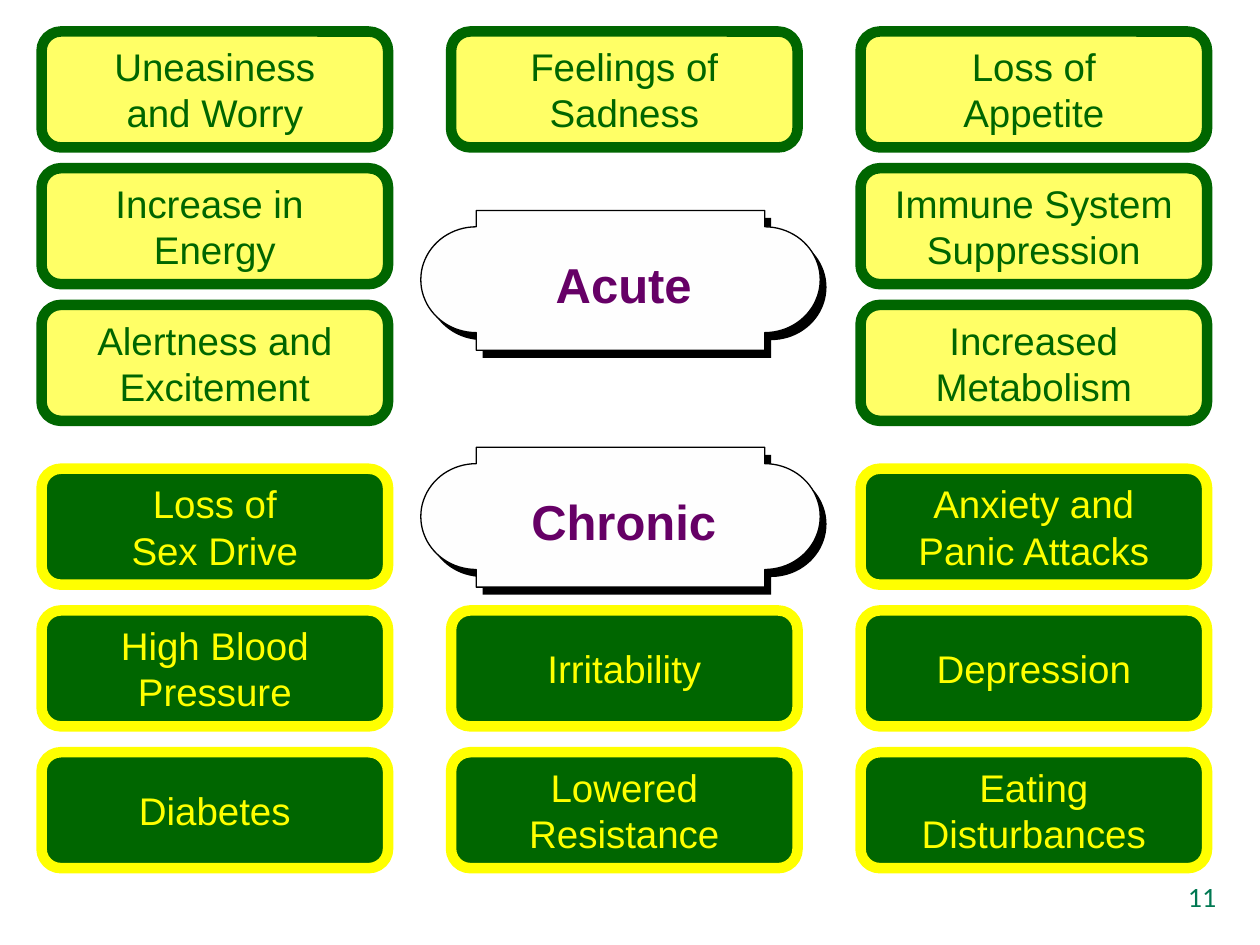
from math import cos, pi, sin

from pptx import Presentation
from pptx.dml.color import RGBColor
from pptx.enum.shapes import MSO_SHAPE as SHAPE
from pptx.enum.text import MSO_ANCHOR as ANCHOR, PP_ALIGN as ALIGN
from pptx.util import Inches, Pt

GREEN, PURPLE = "006600", "660066"
COLUMNS = (0.33, 3.58, 6.83)
BOX_W, BOX_H = 2.75, 0.92

GROUPS = [
    {
        "title": "Acute", "plaque_top": 1.67, "top": 0.25, "pitch": 1.085,
        "fill": "FFFF66", "line": GREEN, "text": GREEN,
        "rows": [
            ("Uneasiness\nand Worry", "Feelings of\nSadness", "Loss of\nAppetite"),
            ("Increase in \nEnergy", None, "Immune System\nSuppression"),
            ("Alertness and\nExcitement", None, "Increased\nMetabolism"),
        ],
    },
    {
        "title": "Chronic", "plaque_top": 3.55, "top": 3.72, "pitch": 1.125,
        "fill": GREEN, "line": "FFFF00", "text": "FFFF00",
        "rows": [
            ("Loss of\nSex Drive", None, "Anxiety and\nPanic Attacks"),
            ("High Blood\nPressure", "Irritability", "Depression"),
            ("Diabetes", "Lowered\nResistance", "Eating\nDisturbances"),
        ],
    },
]

PLAQUE_LEFT, PLAQUE_W, PLAQUE_H = 3.34, 3.17, 1.11
LOBE_W, LOBE_H, LOBE_MID = 0.44, 0.42, 0.55
ARC_STEPS = 40


def rgb(color):
    return RGBColor.from_string(color)


def write(sp, text, size, color, font="Arial", bold=False, align=ALIGN.CENTER):
    p = sp.text_frame.paragraphs[0]
    p.text = text
    p.alignment = align
    p.font.name, p.font.size, p.font.bold = font, Pt(size), bold
    p.font.color.rgb = rgb(color)


def add_textbox(slide, left, top, width, height, *args, **style):
    sp = slide.shapes.add_textbox(*map(Inches, (left, top, width, height)))
    sp.text_frame.word_wrap = True
    write(sp, *args, **style)


def lobe(cx, start):
    angles = [start - pi * i / ARC_STEPS for i in range(ARC_STEPS + 1)]
    return [(cx + LOBE_W * cos(a), LOBE_MID + LOBE_H * sin(a)) for a in angles]


def add_plaque(slide, left, top, fill):
    x1, x2 = LOBE_W, PLAQUE_W - LOBE_W
    outline = [(x1, PLAQUE_H), (x2, PLAQUE_H), *lobe(x2, pi / 2),
               (x2, 0), (x1, 0), *lobe(x1, -pi / 2)]
    points = [(Inches(left + x), Inches(top + y)) for x, y in outline]
    builder = slide.shapes.build_freeform(*points[0])
    builder.add_line_segments(points[1:], close=True)
    sp = builder.convert_to_shape()
    sp.shadow.inherit = False
    sp.fill.solid()
    sp.fill.fore_color.rgb = rgb(fill)
    return sp


def add_title(slide, title, top):
    add_plaque(slide, PLAQUE_LEFT + 0.05, top + 0.06, "000000").line.fill.background()
    front = add_plaque(slide, PLAQUE_LEFT, top, "FEFEFE")
    front.line.color.rgb = rgb("000000")
    front.line.width = Pt(0)
    add_textbox(slide, 3.96, top + 0.3, 1.98, 0.57, title, 28, PURPLE, bold=True)


def add_box(slide, left, top, text, group):
    sp = slide.shapes.add_shape(
        SHAPE.ROUNDED_RECTANGLE, *map(Inches, (left, top, BOX_W, BOX_H)))
    sp.shadow.inherit = False
    sp.fill.solid()
    sp.fill.fore_color.rgb = rgb(group["fill"])
    sp.line.color.rgb = rgb(group["line"])
    sp.line.width = Pt(6)
    sp.text_frame.word_wrap = False
    sp.text_frame.vertical_anchor = ANCHOR.MIDDLE
    write(sp, text, 22, group["text"])


def main():
    prs = Presentation()
    prs.slide_width, prs.slide_height = Inches(10), Inches(7.5)
    slide = prs.slides.add_slide(prs.slide_layouts[6])
    add_textbox(slide, 9.33, 6.93, 0.5, 0.37, "11", 16, "007852",
                font="Calibri", align=ALIGN.LEFT)
    for group in GROUPS:
        add_title(slide, group["title"], group["plaque_top"])
    for group in GROUPS:
        for i, row in enumerate(group["rows"]):
            for left, text in zip(COLUMNS, row):
                if text:
                    add_box(slide, left, group["top"] + i * group["pitch"], text, group)
    prs.save("out.pptx")


if __name__ == "__main__":
    main()
